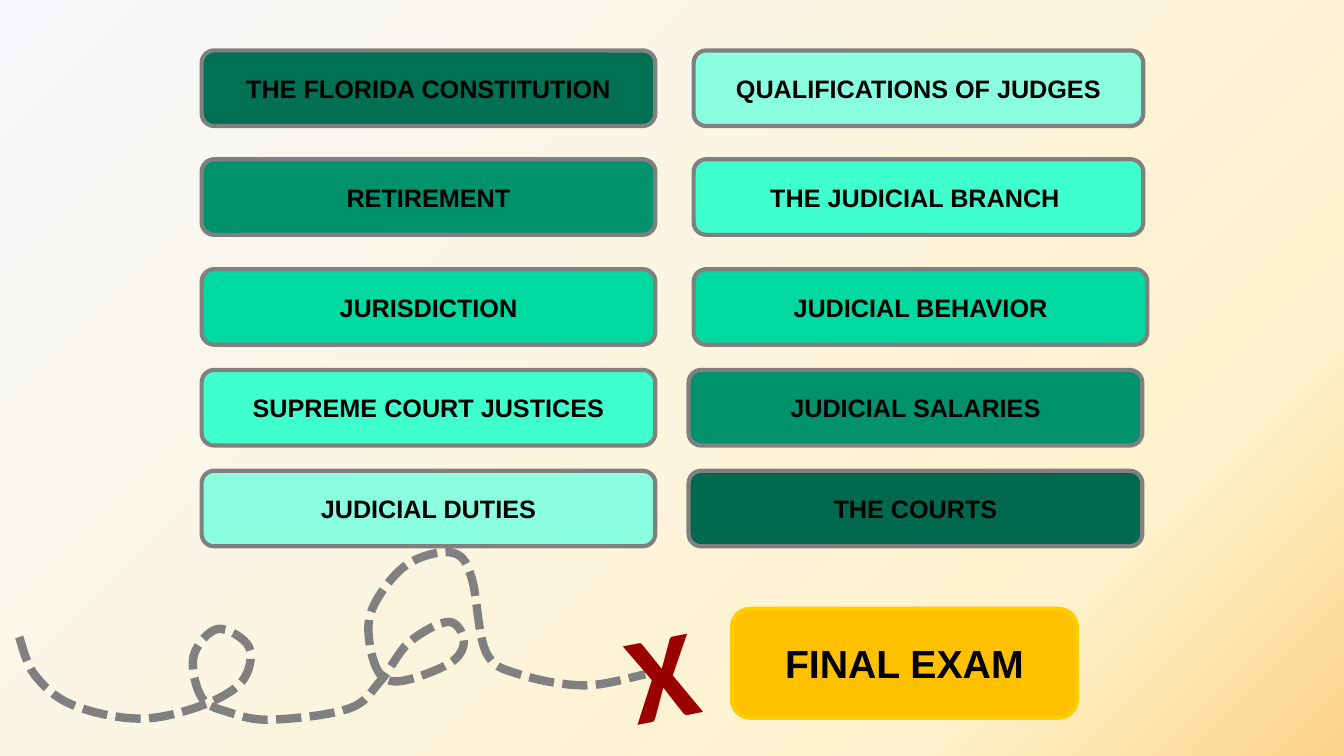
from itertools import accumulate, chain

from lxml import etree
from pptx import Presentation
from pptx.dml.color import RGBColor
from pptx.enum.dml import MSO_LINE
from pptx.enum.shapes import MSO_SHAPE
from pptx.enum.text import MSO_ANCHOR, PP_ALIGN
from pptx.oxml.ns import qn
from pptx.util import Inches, Pt

BUTTON_SHAPE = MSO_SHAPE.FLOWCHART_ALTERNATE_PROCESS
TRAIL_DASH = MSO_LINE.SQUARE_DOT
MIDDLE = MSO_ANCHOR.MIDDLE
CENTER = PP_ALIGN.CENTER

BLACK, GREY, RED = "000000", "808080", "9A0000"
AMBER, GOLD = "FFC000", "FFCC00"
FOREST, PINE, EMERALD = "00684D", "007053", "00926C"
JADE, AQUA, MINT = "00DAA1", "3FFFCD", "89FFE0"
BACKGROUND_STOPS = {0: "F6F8FC", 79: "FFF2CC", 100: "FCD388"}

FIRST_ROW_TOP = 0.5
ROW_STEPS = [1.08, 1.09, 1, 1]
BUTTON_HEIGHT = 0.75
LEFT_COLUMN = (2, 4.5)
RIGHT_COLUMN_UPPER = (6.88, 4.46)
RIGHT_COLUMN_MIDDLE = (6.88, 4.5)
RIGHT_COLUMN_LOWER = (6.83, 4.5)
TOPIC_COLUMNS = [
    [
        ("THE FLORIDA CONSTITUTION", PINE, LEFT_COLUMN),
        ("RETIREMENT", EMERALD, LEFT_COLUMN),
        ("JURISDICTION", JADE, LEFT_COLUMN),
        ("SUPREME COURT JUSTICES", AQUA, LEFT_COLUMN),
        ("JUDICIAL DUTIES", MINT, LEFT_COLUMN),
    ],
    [
        ("QUALIFICATIONS OF JUDGES", MINT, RIGHT_COLUMN_UPPER),
        ("THE JUDICIAL BRANCH ", AQUA, RIGHT_COLUMN_UPPER),
        ("JUDICIAL BEHAVIOR", JADE, RIGHT_COLUMN_MIDDLE),
        ("JUDICIAL SALARIES", EMERALD, RIGHT_COLUMN_LOWER),
        ("THE COURTS", FOREST, RIGHT_COLUMN_LOWER),
    ],
]

STEPS_PER_SPAN = 8
TRAIL_KNOTS = {
    "descent": [(0.19, 6.32), (0.34, 6.69), (0.71, 6.99), (1.38, 7.13)],
    "small loop": [(2, 7), (2.4, 6.76), (2.47, 6.42), (2.16, 6.24),
                   (1.92, 6.51), (2, 6.92)],
    "valley": [(2.28, 7.07), (2.7, 7.14), (3.46, 7.03)],
    "inner loop": [(3.77, 6.76), (4.06, 6.37), (4.45, 6.17), (4.6, 6.36),
                   (4.46, 6.58), (3.95, 6.76)],
    "outer loop": [(3.73, 6.62), (3.66, 6.15), (3.87, 5.76), (4.15, 5.54),
                   (4.51, 5.49), (4.68, 5.74)],
    "way to the X": [(4.82, 6.47), (5.15, 6.69), (5.8, 6.8), (6.4, 6.69)],
}


def color(hex_value):
    """Return the colour for a hex string."""
    return RGBColor.from_string(hex_value)


def apply(target, formats):
    """Set each attribute of the target from a dict."""
    for attribute, value in formats.items():
        setattr(target, attribute, value)


def paint_background(slide):
    """Fill the slide with a diagonal gradient."""
    fill = slide.background.fill
    fill.gradient()
    fill.gradient_angle = 315
    stops = next(slide.element.iter(qn("a:gsLst")))
    for default_stop in list(stops):
        stops.remove(default_stop)
    for percent, hex_value in BACKGROUND_STOPS.items():
        stop = etree.SubElement(stops, qn("a:gs"), pos=str(percent * 1000))
        etree.SubElement(stop, qn("a:srgbClr"), val=hex_value)


def style_outline(shape, hex_value, points):
    """Give a shape a plain outline and no shadow."""
    shape.shadow.inherit = False
    shape.line.color.rgb = color(hex_value)
    shape.line.width = Pt(points)


def write_text(paragraph, text, font_name, size, hex_value):
    """Write one bold run in a paragraph."""
    run = paragraph.add_run()
    run.text = text
    apply(run.font, {"name": font_name, "size": Pt(size), "bold": True})
    run.font.color.rgb = color(hex_value)


def add_button(slide, label, box, fill_color, outline=GREY, size=18):
    """Add a rounded button with a centred label."""
    button = slide.shapes.add_shape(BUTTON_SHAPE, *map(Inches, box))
    button.fill.solid()
    button.fill.fore_color.rgb = color(fill_color)
    style_outline(button, outline, 3)
    apply(button.text_frame, {"word_wrap": False, "vertical_anchor": MIDDLE})
    paragraph = button.text_frame.paragraphs[0]
    paragraph.alignment = CENTER
    write_text(paragraph, label, "Arial", size, BLACK)


def add_topic_buttons(slide):
    """Lay out the topic buttons in two columns that share their rows."""
    row_tops = list(accumulate(ROW_STEPS, initial=FIRST_ROW_TOP))
    for topics in TOPIC_COLUMNS:
        for top, (label, fill_color, (left, width)) in zip(row_tops, topics):
            add_button(slide, label, (left, top, width, BUTTON_HEIGHT), fill_color)


def spline_value(before, start, end, after, t):
    """Return a Catmull-Rom coordinate at t between start and end."""
    return 0.5 * (
        2 * start
        + (end - before) * t
        + (2 * before - 5 * start + 4 * end - after) * t ** 2
        + (3 * start - before - 3 * end + after) * t ** 3
    )


def smooth_curve(knots):
    """Return points on a smooth curve that passes through every knot."""
    padded = [knots[0], *knots, knots[-1]]
    points = [knots[0]]
    for span in zip(padded, padded[1:], padded[2:], padded[3:]):
        xs, ys = zip(*span)
        for step in range(1, STEPS_PER_SPAN + 1):
            t = step / STEPS_PER_SPAN
            points.append((spline_value(*xs, t), spline_value(*ys, t)))
    return points


def add_trail(slide):
    """Draw the dashed, looping treasure trail."""
    knots = list(chain.from_iterable(TRAIL_KNOTS.values()))
    start, *rest = [(Inches(x), Inches(y)) for x, y in smooth_curve(knots)]
    builder = slide.shapes.build_freeform(*start)
    builder.add_line_segments(rest, close=False)
    trail = builder.convert_to_shape()
    trail.fill.background()
    style_outline(trail, GREY, 6)
    trail.line.dash_style = TRAIL_DASH


def add_x_mark(slide):
    """Add the tilted X where the trail ends."""
    x_mark = slide.shapes.add_textbox(*map(Inches, (6.11, 5.76, 2, 1.58)))
    x_mark.rotation = 348.8
    x_mark.text_frame.word_wrap = True
    write_text(x_mark.text_frame.paragraphs[0], "X", "Calibri", 88, RED)


def main():
    """Build and save the slide."""
    presentation = Presentation()
    apply(presentation, {"slide_width": Inches(13.33), "slide_height": Inches(7.5)})
    slide = presentation.slides.add_slide(presentation.slide_layouts[6])
    paint_background(slide)
    add_trail(slide)
    add_x_mark(slide)
    add_topic_buttons(slide)
    add_button(slide, "FINAL EXAM", (7.26, 6.04, 3.42, 1.08), AMBER, GOLD, 28)
    presentation.save("out.pptx")


if __name__ == "__main__":
    main()
